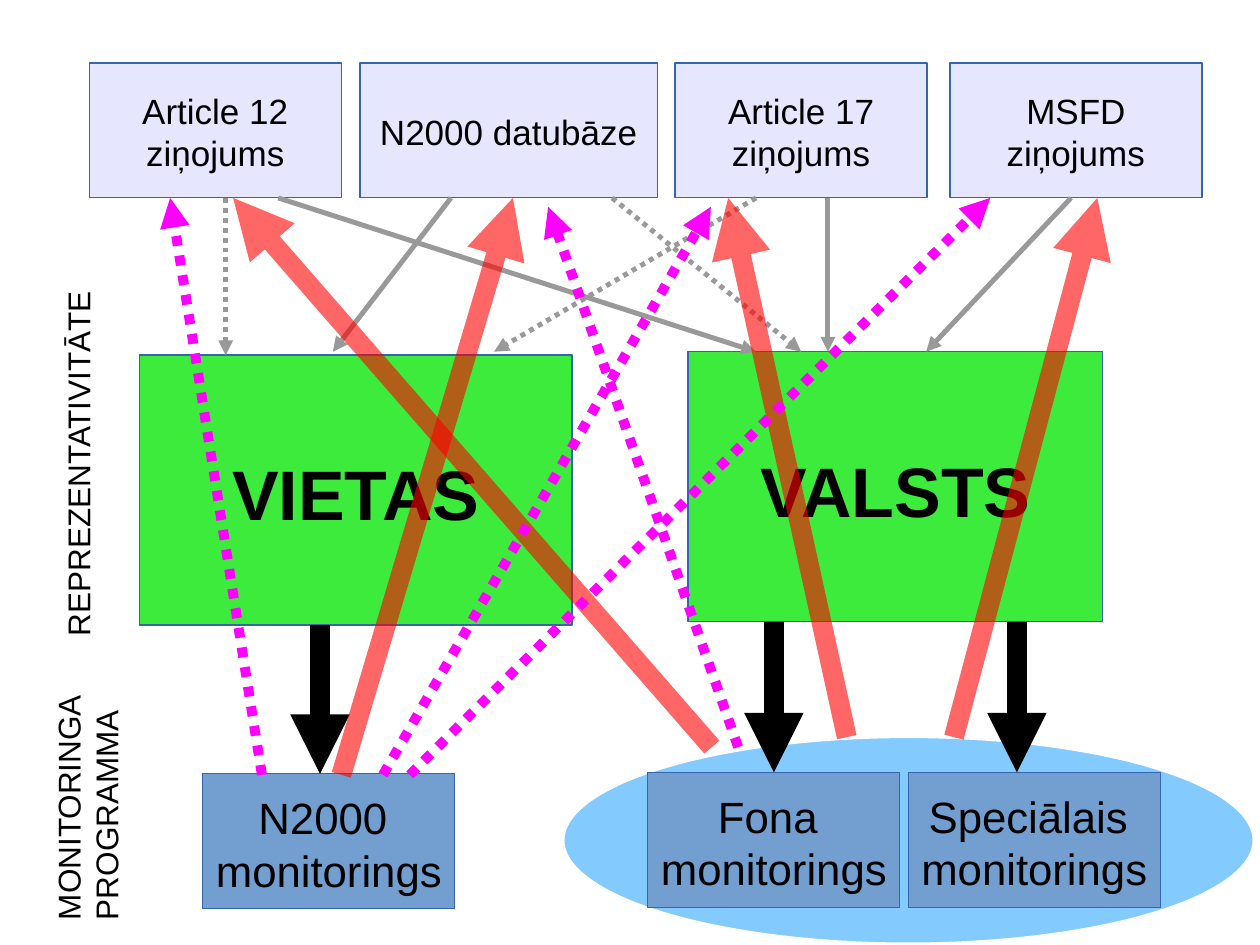
from dataclasses import dataclass
from typing import Optional

from lxml import etree
from pptx import Presentation
from pptx.dml.color import RGBColor
from pptx.enum import dml, shapes, text
from pptx.oxml import ns
from pptx.util import Cm, Pt


@dataclass(frozen=True)
class Theme:
    font: str = "Arial"
    ink: str = "000000"
    outline: str = "3465AF"
    paper: str = "FFFFFF"
    level: str = "3DEB3D"
    report: str = "E6E6FF"
    programme: str = "729FCF"
    oval: str = "83CAFF"
    level_size: int = 40
    report_size: int = 20
    programme_size: int = 25
    label_size: int = 18


THEME = Theme()


@dataclass(frozen=True)
class BoxStyle:
    fill: str
    size: int
    height: float
    inset_top: float
    bold: bool = False


LEVEL = BoxStyle(THEME.level, THEME.level_size, 5.44, 0.2, True)
REPORT = BoxStyle(THEME.report, THEME.report_size, 2.72, 0.15)
PROGRAMME = BoxStyle(THEME.programme, THEME.programme_size, 2.72, 0.18)


@dataclass(frozen=True)
class Box:
    caption: str
    left: float
    top: float
    style: BoxStyle
    width: float = 5.08


@dataclass(frozen=True)
class ArrowStyle:
    color: str
    weight: float
    dotted: bool = False
    opacity: Optional[int] = None


USE = ArrowStyle("999999", 2.83)
PARTIAL_USE = ArrowStyle("999999", 2.83, dotted=True)
DESIGN = ArrowStyle("000000", 11.34)
DATA = ArrowStyle("FF0000", 11.34, opacity=60)
EXTRA_DATA = ArrowStyle("FF00FF", 5.67, dotted=True)


@dataclass(frozen=True)
class Arrow:
    style: ArrowStyle
    x1: float
    y1: float
    x2: float
    y2: float
    target: Optional[str] = None


@dataclass(frozen=True)
class SideLabel:
    caption: str
    left: float
    top: float
    width: float
    height: float


REPORT_TOP, REPORT_BOTTOM = 1.27, 3.99
SITES_TOP, SITES_BOTTOM = 7.16, 12.6
STATE_TOP, STATE_BOTTOM = 7.09, 12.53
N2000_TOP, STATE_PROGRAMME_TOP = 15.6, 15.57
N2000_START = 15.62

BOXES = [
    Box("VIETAS", 2.82, SITES_TOP, LEVEL, 8.71),
    Box("VALSTS", 13.87, STATE_TOP, LEVEL, 8.36),
    Box("N2000 datubāze", 7.26, REPORT_TOP, REPORT, 5.99),
    Box("Article 12\nziņojums", 1.8, REPORT_TOP, REPORT),
    Box("Article 17\nziņojums", 13.61, REPORT_TOP, REPORT),
    Box("MSFD\nziņojums", 19.15, REPORT_TOP, REPORT),
    Box("N2000 \nmonitorings", 4.09, N2000_TOP, PROGRAMME),
]
BACKGROUND = "Fona \nmonitorings"
STATE_PROGRAMMES = [
    Box(BACKGROUND, 13.06, STATE_PROGRAMME_TOP, PROGRAMME),
    Box("Speciālais \nmonitorings", 18.31, STATE_PROGRAMME_TOP, PROGRAMME),
]
ARROWS = [
    Arrow(USE, 21.59, REPORT_BOTTOM, 18.67, STATE_TOP),
    Arrow(USE, 16.69, REPORT_BOTTOM, 16.69, STATE_TOP),
    Arrow(PARTIAL_USE, 15.24, REPORT_BOTTOM, 9.96, STATE_TOP),
    Arrow(USE, 9.09, REPORT_BOTTOM, 6.71, STATE_TOP),
    Arrow(PARTIAL_USE, 12.34, REPORT_BOTTOM, 16.15, STATE_TOP),
    Arrow(PARTIAL_USE, 4.55, REPORT_BOTTOM, 4.55, SITES_TOP),
    Arrow(USE, 5.61, REPORT_BOTTOM, 15.24, STATE_TOP),
    Arrow(DESIGN, 6.45, SITES_BOTTOM, 6.45, N2000_TOP),
    Arrow(DESIGN, 15.6, STATE_BOTTOM, 15.6, STATE_PROGRAMME_TOP, BACKGROUND),
    Arrow(DESIGN, 20.5, STATE_BOTTOM, 20.5, STATE_PROGRAMME_TOP),
    Arrow(DATA, 6.88, N2000_START, 10.34, REPORT_BOTTOM),
    Arrow(DATA, 14.35, 15.06, 4.7, REPORT_BOTTOM),
    Arrow(DATA, 17.07, 14.86, 14.68, REPORT_BOTTOM),
    Arrow(EXTRA_DATA, 5.28, N2000_START, 3.43, REPORT_BOTTOM),
    Arrow(EXTRA_DATA, 7.72, N2000_START, 14.33, 4.17),
    Arrow(DATA, 19.23, 14.86, 22.12, REPORT_BOTTOM),
    Arrow(EXTRA_DATA, 8.26, N2000_START, 19.96, REPORT_BOTTOM),
    Arrow(EXTRA_DATA, 14.88, 15.06, 11.05, 4.17),
]
SIDE_LABELS = [
    SideLabel("REPREZENTATIVITĀTE", 0.91, 5.59, 1.04, 7.44),
    SideLabel("MONITORINGA PROGRAMMA", 0.71, 13.72, 1.45, 5.03),
]


def write(frame, caption: str, size: int, align, bold: bool = False) -> None:
    frame.text = caption
    for paragraph in frame.paragraphs:
        paragraph.alignment = align
        for run in paragraph.runs:
            run.font.name = THEME.font
            run.font.size = Pt(size)
            run.font.bold = bold
            run.font.color.rgb = RGBColor.from_string(THEME.ink)


def set_insets(frame, side: float, top: float, bottom: float) -> None:
    frame.margin_left = frame.margin_right = Cm(side)
    frame.margin_top, frame.margin_bottom = Cm(top), Cm(bottom)


def paint(shape, fill: str, outline: str, weight: float) -> None:
    shape.shadow.inherit = False
    shape.fill.solid()
    shape.fill.fore_color.rgb = RGBColor.from_string(fill)
    shape.line.color.rgb = RGBColor.from_string(outline)
    shape.line.width = Pt(weight)


def draw_box(canvas, box: Box):
    style = box.style
    shape = canvas.add_shape(shapes.MSO_SHAPE.RECTANGLE, Cm(box.left), Cm(box.top),
                             Cm(box.width), Cm(style.height))
    paint(shape, style.fill, THEME.outline, 0.75)
    frame = shape.text_frame
    frame.word_wrap = False
    frame.vertical_anchor = text.MSO_ANCHOR.MIDDLE
    set_insets(frame, 0.25, style.inset_top, 0.1)
    write(frame, box.caption, style.size, text.PP_ALIGN.CENTER, style.bold)
    return shape


def draw_arrow(canvas, arrow: Arrow, drawn: dict) -> None:
    style = arrow.style
    connector = canvas.add_connector(shapes.MSO_CONNECTOR.STRAIGHT, Cm(arrow.x1), Cm(arrow.y1),
                                     Cm(arrow.x2), Cm(arrow.y2))
    line = connector.line
    line.color.rgb = RGBColor.from_string(style.color)
    line.width = Pt(style.weight)
    if style.dotted:
        line.dash_style = dml.MSO_LINE.ROUND_DOT
    properties = connector._element.spPr
    outline = properties.find(ns.qn("a:ln"))
    if style.opacity is not None:
        color = outline.find(".//" + ns.qn("a:srgbClr"))
        etree.SubElement(color, ns.qn("a:alpha")).set("val", str(style.opacity * 1000))
    etree.SubElement(outline, ns.qn("a:tailEnd")).set("type", "triangle")
    etree.SubElement(properties, ns.qn("a:effectLst"))
    if arrow.target:
        connector.end_connect(drawn[arrow.target], 0)


def draw_side_label(canvas, label: SideLabel) -> None:
    """Draw a caption that reads upwards."""
    frame = canvas.add_textbox(Cm(label.left), Cm(label.top),
                               Cm(label.width), Cm(label.height)).text_frame
    frame.word_wrap = True
    set_insets(frame, 0.28, 0.2, 0.2)
    frame._txBody.bodyPr.set("vert", "vert270")
    write(frame, label.caption, THEME.label_size, text.PP_ALIGN.LEFT)


def main() -> None:
    deck = Presentation()
    deck.slide_width, deck.slide_height = Cm(25.4), Cm(19.05)
    canvas = deck.slides.add_slide(deck.slide_layouts[6]).shapes
    drawn = {box.caption: draw_box(canvas, box) for box in BOXES}
    state_group = canvas.add_group_shape().shapes
    oval = state_group.add_shape(shapes.MSO_SHAPE.OVAL, Cm(11.33), Cm(14.83), Cm(13.97), Cm(4.22))
    paint(oval, THEME.oval, THEME.paper, 2.83)
    drawn.update({box.caption: draw_box(state_group, box) for box in STATE_PROGRAMMES})
    for arrow in ARROWS:
        draw_arrow(canvas, arrow, drawn)
    for label in SIDE_LABELS:
        draw_side_label(canvas, label)
    deck.save("out.pptx")


if __name__ == "__main__":
    main()
